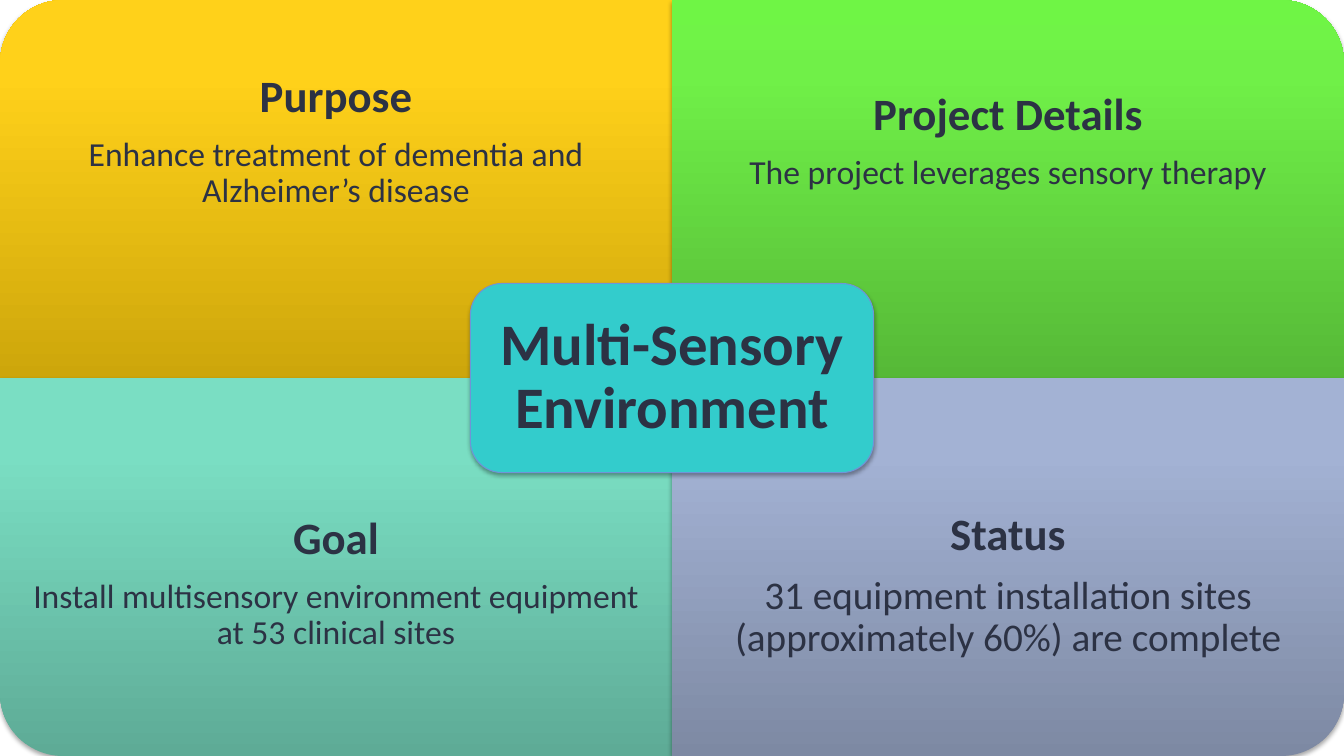
import pptx
import pptx.util
import pptx.oxml
import pptx.oxml.ns
from pptx.dml.color import RGBColor
from pptx.enum.shapes import MSO_SHAPE
from pptx.enum.text import MSO_ANCHOR, PP_ALIGN

INK = RGBColor(0x2C, 0x32, 0x44)
TEAL = RGBColor(0x33, 0xCC, 0xCC)
EDGE = RGBColor(0x70, 0x94, 0xD7)
NS = pptx.oxml.ns.nsdecls("a")

prs = pptx.Presentation()
prs.slide_width = pptx.util.Inches(13.33)
prs.slide_height = pptx.util.Inches(7.5)
W, H = prs.slide_width, prs.slide_height
s = prs.slides.add_slide(prs.slide_layouts[6])


def add_shadow(sp):
    sp.shadow.inherit = False
    effects = sp._element.spPr.find(pptx.oxml.ns.qn("a:effectLst"))
    effects.append(pptx.oxml.parse_xml(
        f'<a:outerShdw {NS} blurRad="40000" dist="23000" dir="5400000" rotWithShape="0">'
        '<a:srgbClr val="000000"><a:alpha val="35000"/></a:srgbClr></a:outerShdw>'))


def write(sp, lines, inset, extra_bottom=0):
    tf = sp.text_frame
    margin = pptx.util.Inches(inset)
    frame = {"word_wrap": True, "vertical_anchor": MSO_ANCHOR.MIDDLE,
             "margin_left": margin, "margin_right": margin, "margin_top": margin,
             "margin_bottom": margin + pptx.util.Inches(extra_bottom)}
    for name, value in frame.items():
        setattr(tf, name, value)
    for i, (text, size, bold) in enumerate(lines):
        p = tf.paragraphs[0] if i == 0 else tf.add_paragraph()
        p.alignment = PP_ALIGN.CENTER
        p.line_spacing = 0.9
        p.space_after = pptx.util.Pt(round(0.35 * size))
        r = p.add_run()
        r.text = text
        font = {"name": "Calibri", "size": pptx.util.Pt(size), "bold": bold}
        for name, value in font.items():
            setattr(r.font, name, value)
        r.font.color.rgb = INK


# Quadrants: column, row, rotation, gradient colours, title, body, body size, extra bottom inset
quadrants = [
    (0, 0, 270, ("CDA60B", "FFD11A", "FFD11B"), "Purpose",
     "Enhance treatment of dementia and Alzheimer’s disease", 24, 0),
    (1, 0, 0, ("56B937", "70F048", "6FF545"), "Project Details",
     "The project leverages sensory therapy", 24, 0),
    (0, 1, 180, ("5EAB96", "7ADEC3", "78E1C5"), "Goal",
     "Install multisensory environment equipment at 53 clinical sites", 24, 0.6),
    (1, 1, 90, ("7D89A3", "A3B2D4", "A3B3D6"), "Status",
     "31 equipment installation sites (approximately 60%) are complete", 28, 0.56),
]
for col, row, turn, colours, title, body, size, extra in quadrants:
    # Panel, turned about its centre so the round corner faces outwards
    w, h = (H // 2, W // 2) if turn % 180 else (W // 2, H // 2)
    left = W * (2 * col + 1) // 4 - w // 2
    top = H * (2 * row + 1) // 4 - h // 2
    sp = s.shapes.add_shape(MSO_SHAPE.ROUND_1_RECTANGLE, left, top, w, h)
    sp.rotation = turn
    sp.line.fill.background()
    stops = "".join(f'<a:gs pos="{pos}"><a:srgbClr val="{colour}"/></a:gs>'
                    for pos, colour in zip((0, 80000, 100000), colours))
    sp._element.spPr.find(pptx.oxml.ns.qn("a:prstGeom")).addnext(pptx.oxml.parse_xml(
        f'<a:gradFill {NS} rotWithShape="0"><a:gsLst>{stops}</a:gsLst>'
        '<a:lin ang="16200000" scaled="0"/></a:gradFill>'))
    add_shadow(sp)

    # Text takes the outer three quarters of the panel
    box = s.shapes.add_textbox(W * col // 2, H * 5 * row // 8, W // 2, H * 3 // 8)
    write(box, [(title, 32, True), (body, size, False)], 0.25, extra)

# Centre label
sp = s.shapes.add_shape(MSO_SHAPE.ROUNDED_RECTANGLE,
                        W * 35 // 100, H * 3 // 8, W * 30 // 100, H // 4)
sp.fill.solid()
sp.fill.fore_color.rgb = TEAL
sp.line.color.rgb = EDGE
sp.line.width = pptx.util.Pt(0.75)
add_shadow(sp)
write(sp, [("Multi-Sensory Environment", 42, True)], 0.17)

prs.save("out.pptx")
